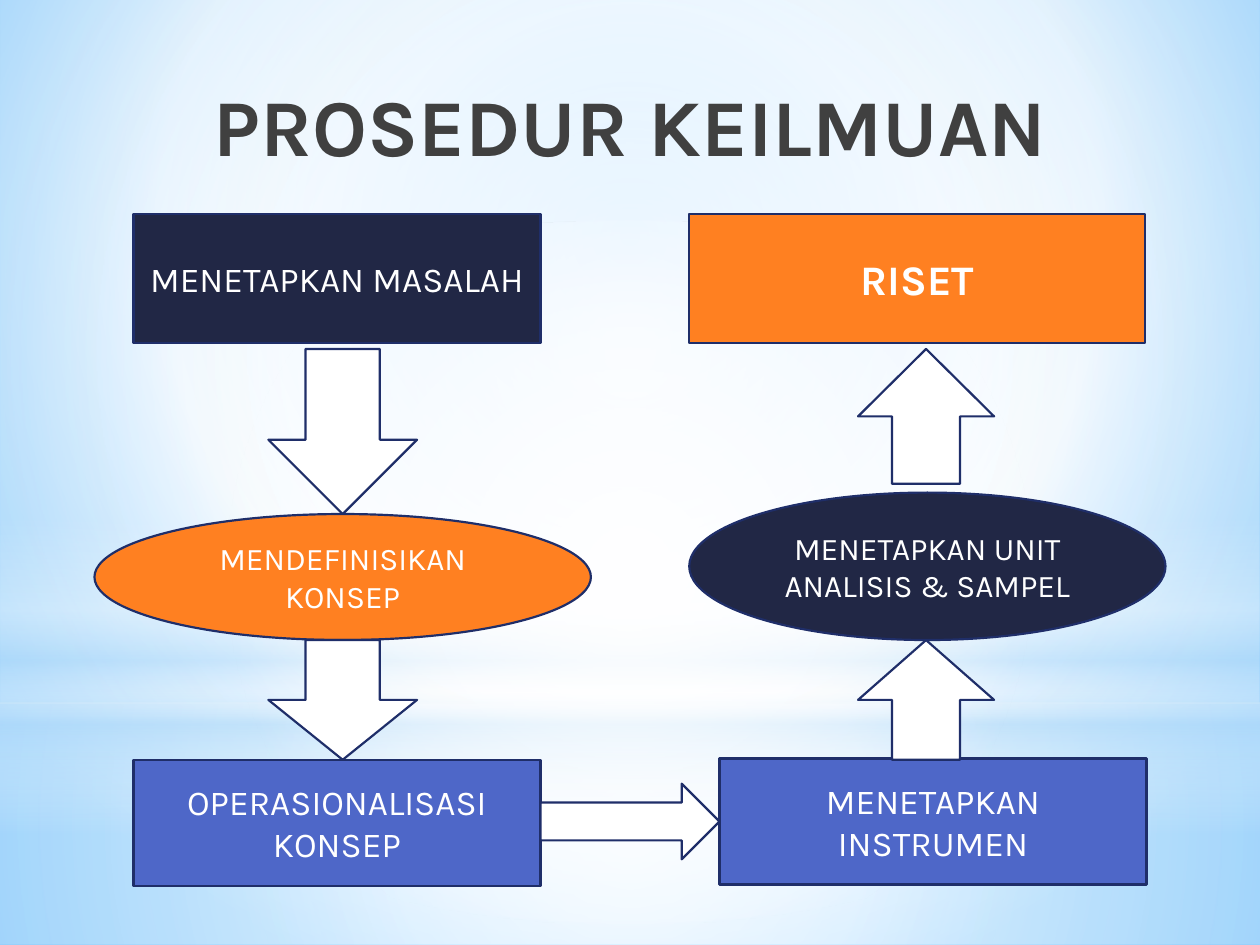
from lxml import etree
from pptx import Presentation
from pptx.dml.color import RGBColor
from pptx.enum.shapes import MSO_SHAPE as Shape
from pptx.enum.text import MSO_ANCHOR as Anchor, PP_ALIGN as Align
from pptx.oxml.ns import nsdecls, qn
from pptx.util import Inches, Pt

FONT = "Karla"
WHITE = RGBColor(0xFF, 0xFF, 0xFF)
GREY = RGBColor(0x40, 0x40, 0x40)
NAVY = RGBColor(0x21, 0x27, 0x45)
ORANGE = RGBColor(0xFF, 0x80, 0x21)
BLUE = RGBColor(0x4E, 0x67, 0xC8)
OUTLINE = RGBColor(0x1F, 0x2E, 0x69)
SKY = RGBColor(0x9E, 0xD5, 0xFF)
DEEP_SKY = RGBColor(0x5B, 0xB9, 0xFF)
PALE = RGBColor(0xB4, 0xDC, 0xFA)

CENTRE = (50, 50, 50, 50)

# Left, top, width, height; then (position, colour, opacity) stops in percent
GLOWS = [
    (Shape.RECTANGLE, (0, 5.58, 10, 1.92), CENTRE,
     [(0, WHITE, 91), (37, WHITE, 76), (100, PALE, 79)]),
    (Shape.RECTANGLE, (0, 0, 10, 5.58), CENTRE,
     [(0, WHITE, 89), (48, WHITE, 62), (100, PALE, 79)]),
    (Shape.RECTANGLE, (0, 4.12, 10, 2.5), None,
     [(0, WHITE, 0), (29, WHITE, 30), (45, PALE, 40),
      (55, WHITE, 26), (65, PALE, 60), (100, WHITE, 0)]),
    (Shape.OVAL, (0, 1.75, 10, 5.58), CENTRE,
     [(0, WHITE, 100), (56, WHITE, 0)]),
]

STEPS = [
    (Shape.RECTANGLE, (1.06, 1.7, 3.23, 1.02), NAVY, "MENETAPKAN MASALAH", 20),
    (Shape.OVAL, (0.75, 4.08, 3.94, 1), ORANGE, "MENDEFINISIKAN KONSEP", 18),
    (Shape.RECTANGLE, (1.06, 6.03, 3.23, 1), BLUE, "OPERASIONALISASI\nKONSEP", 20),
    (Shape.RECTANGLE, (5.71, 6.02, 3.39, 1), BLUE, "MENETAPKAN\nINSTRUMEN", 20),
    (Shape.OVAL, (5.47, 3.91, 3.78, 1.17), NAVY, "MENETAPKAN UNIT ANALISIS & SAMPEL", 18),
    (Shape.RECTANGLE, (5.47, 1.7, 3.62, 1.02), ORANGE, "RISET", 24),
]

ARROWS = [
    (Shape.DOWN_ARROW, (2.13, 2.77, 1.18, 1.31)),
    (Shape.DOWN_ARROW, (2.13, 5.08, 1.18, 0.95)),
    (Shape.RIGHT_ARROW, (4.29, 6.22, 1.42, 0.6)),
    (Shape.UP_ARROW, (6.81, 5.08, 1.08, 0.95)),
    (Shape.UP_ARROW, (6.81, 2.77, 1.08, 1.07)),
]


def set_gradient(parent, stops, focus):
    """Swap the solid fill in parent for a gradient, circular if it has a focus."""
    stop_xml = "".join(
        f'<a:gs pos="{pos * 1000}"><a:srgbClr val="{color}">'
        f'<a:alpha val="{opacity * 1000}"/></a:srgbClr></a:gs>'
        for pos, color, opacity in stops)
    if focus:
        sides = " ".join(f'{side}="{v * 1000}"' for side, v in zip("ltrb", focus))
        direction = f'<a:path path="circle"><a:fillToRect {sides}/></a:path>'
    else:
        direction = '<a:lin ang="5400000" scaled="0"/>'
    gradient = etree.fromstring(
        f'<a:gradFill {nsdecls("a")} rotWithShape="1">'
        f'<a:gsLst>{stop_xml}</a:gsLst>{direction}</a:gradFill>')
    parent.replace(parent.find(qn("a:solidFill")), gradient)


def add_filled(slide, kind, box, color):
    sp = slide.shapes.add_shape(kind, *map(Inches, box))
    sp.shadow.inherit = False
    sp.fill.solid()
    sp.fill.fore_color.rgb = color
    return sp


def add_glow(slide, kind, box, focus, stops):
    sp = add_filled(slide, kind, box, WHITE)
    sp.line.fill.background()
    set_gradient(sp.element.spPr, stops, focus)


def add_outlined(slide, kind, box, color):
    sp = add_filled(slide, kind, box, color)
    sp.line.color.rgb = OUTLINE
    sp.line.width = Pt(1.25)
    return sp


def write(sp, text, size, color, bold):
    tf = sp.text_frame
    tf.text = text
    tf.word_wrap = True
    tf.vertical_anchor = Anchor.MIDDLE
    for p in tf.paragraphs:
        p.alignment = Align.CENTER
        for r in p.runs:
            r.font.name = FONT
            r.font.size = Pt(size)
            r.font.bold = bold
            r.font.color.rgb = color


def add_step(slide, kind, box, color, text, size):
    sp = add_outlined(slide, kind, box, color)
    write(sp, text, size, WHITE, bold=text == "RISET")


def set_title(slide, text):
    title = slide.shapes.title
    title.left, title.top, title.width, title.height = map(
        Inches, (0.91, 0.44, 8.18, 1.1))
    write(title, text, 46, GREY, bold=True)
    # Bring the title in front of the glows
    slide.shapes.element.append(title.element)


def main():
    prs = Presentation()
    prs.slide_width, prs.slide_height = Inches(10), Inches(7.5)
    slide = prs.slides.add_slide(prs.slide_layouts[5])

    # Background and its glows
    slide.background.fill.solid()
    set_gradient(next(slide.element.iter(qn("p:bgPr"))),
                 [(0, SKY, 100), (60, WHITE, 100), (100, DEEP_SKY, 100)],
                 (20, 10, 20, 60))
    for glow in GLOWS:
        add_glow(slide, *glow)

    set_title(slide, "PROSEDUR KEILMUAN")

    # Flow of steps, then the block arrows between them
    for step in STEPS:
        add_step(slide, *step)
    for kind, box in ARROWS:
        add_outlined(slide, kind, box, WHITE)

    prs.save("out.pptx")


if __name__ == "__main__":
    main()
